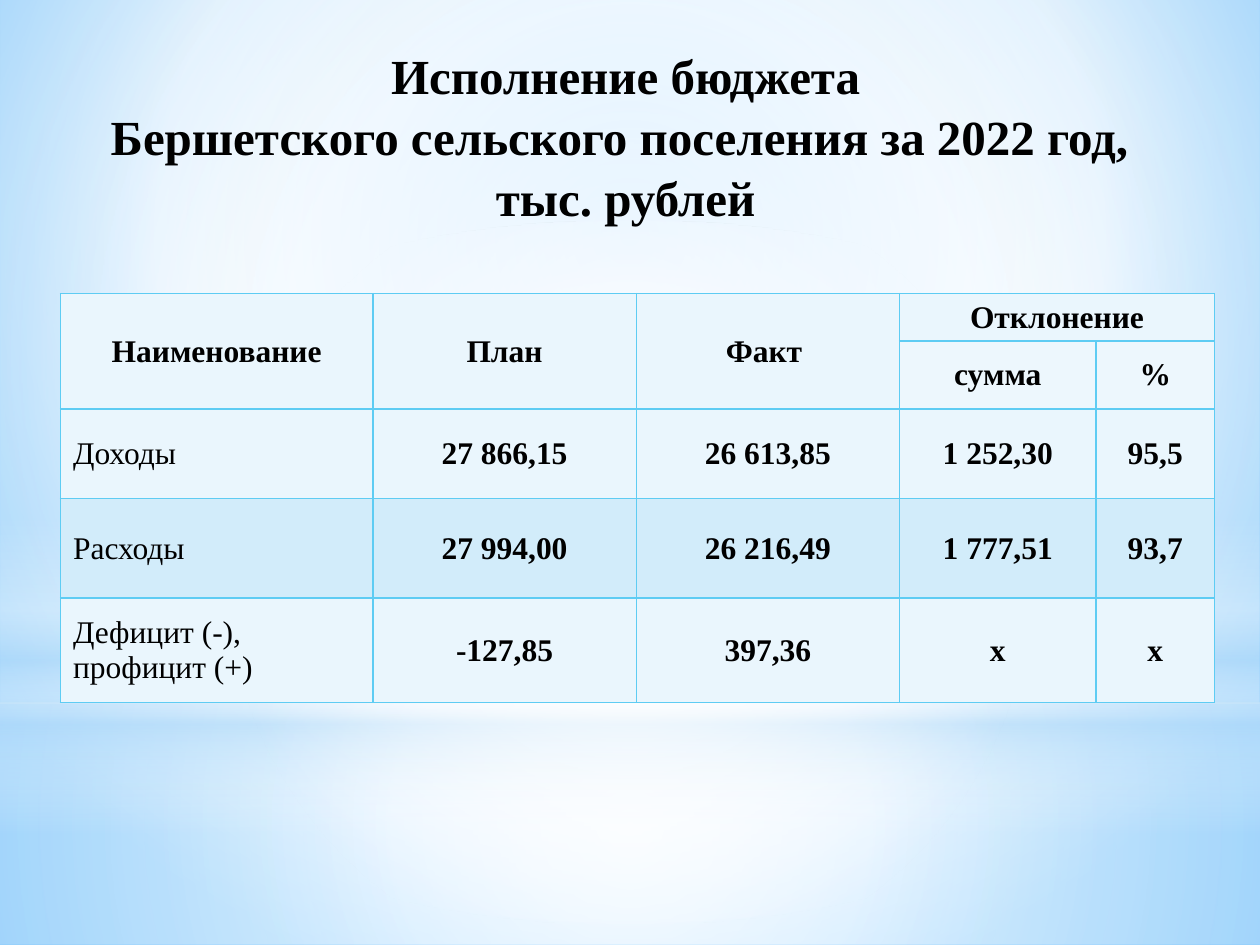
import pptx
import pptx.dml.color
import pptx.enum.shapes
import pptx.enum.text
import pptx.oxml
import pptx.oxml.ns
import pptx.util

Inches, Pt = pptx.util.Inches, pptx.util.Pt
RGBColor = pptx.dml.color.RGBColor
PP_ALIGN = pptx.enum.text.PP_ALIGN
MIDDLE = pptx.enum.text.MSO_ANCHOR.MIDDLE
MSO_SHAPE = pptx.enum.shapes.MSO_SHAPE
qn = pptx.oxml.ns.qn
NS = pptx.oxml.ns.nsdecls("a")

BLACK = RGBColor(0x00, 0x00, 0x00)
WHITE = RGBColor(0xFF, 0xFF, 0xFF)
SKY = RGBColor(0xB4, 0xDC, 0xFA)
BG_EDGE = RGBColor(0x5B, 0xB9, 0xFF)
BG_CORE = RGBColor(0x9E, 0xD5, 0xFF)
BORDER = RGBColor(0x5E, 0xCC, 0xF3)
ROW_LIGHT = RGBColor(0xEA, 0xF6, 0xFD)
ROW_SUBHEAD = RGBColor(0xED, 0xF7, 0xFD)
ROW_DARK = RGBColor(0xD2, 0xEC, 0xFA)

CENTRE = (50, 50, 50, 50)


class Deck:
    font = "Times New Roman"

    def __init__(self, prs):
        self.s = prs.slides.add_slide(prs.slide_layouts[5])

    def gradient(self, parent, stops, focus=None):
        """Swap the default gradient of parent: circular around focus, or vertical."""
        gs = "".join(
            f'<a:gs pos="{pos * 1000}"><a:srgbClr val="{color}">'
            f'<a:alpha val="{alpha * 1000}"/></a:srgbClr></a:gs>'
            for pos, color, alpha in stops)
        if focus:
            l, t, r, b = (v * 1000 for v in focus)
            course = (f'<a:path path="circle"><a:fillToRect l="{l}" t="{t}" '
                      f'r="{r}" b="{b}"/></a:path>')
        else:
            course = '<a:lin ang="5400000" scaled="0"/>'
        old = parent.find(".//" + qn("a:gradFill"))
        old.getparent().replace(old, pptx.oxml.parse_xml(
            f'<a:gradFill {NS} rotWithShape="1"><a:gsLst>{gs}</a:gsLst>{course}</a:gradFill>'))

    def background(self, stops, focus):
        self.s.background.fill.gradient()
        self.gradient(self.s._element, stops, focus)

    def glow(self, kind, top, height, stops, focus=None):
        sp = self.s.shapes.add_shape(kind, 0, Inches(top), Inches(10), Inches(height))
        sp.shadow.inherit = False
        sp.line.fill.background()
        sp.fill.gradient()
        self.gradient(sp._element.spPr, stops, focus)

    def run(self, p, text, size, bold=True):
        r = p.add_run()
        r.text = text
        r.font.name, r.font.size, r.font.bold = self.font, Pt(size), bold
        r.font.color.rgb = BLACK

    def title(self, paragraphs, box, size):
        sp = self.s.shapes.title
        sp.left, sp.top, sp.width, sp.height = map(Inches, box)
        self.s.shapes._spTree.append(sp._element)  # bring to front
        tf = sp.text_frame
        tf.word_wrap = True
        tf.vertical_anchor = MIDDLE
        for i, lines in enumerate(paragraphs):
            p = tf.add_paragraph() if i else tf.paragraphs[0]
            p.alignment = PP_ALIGN.CENTER
            p.line_spacing = 1.04
            for j, line in enumerate(lines):
                if j:
                    p.add_line_break()
                self.run(p, line, size)

    def border(self, cell):
        tcPr = cell._tc.get_or_add_tcPr()
        for i, side in enumerate(("lnL", "lnR", "lnT", "lnB")):
            tcPr.insert(i, pptx.oxml.parse_xml(
                f'<a:{side} {NS} w="12700"><a:solidFill><a:srgbClr val="{BORDER}"/>'
                f'</a:solidFill></a:{side}>'))

    def table(self, rows, fills, left, top, widths, heights, merges, size, head_rows):
        tbl = self.s.shapes.add_table(
            len(rows), len(widths), Inches(left), Inches(top),
            Inches(sum(widths)), Inches(sum(heights))).table
        for col, width in zip(tbl.columns, widths):
            col.width = Inches(width)
        for row, height in zip(tbl.rows, heights):
            row.height = Inches(height)
        for (r1, c1), (r2, c2) in merges:
            tbl.cell(r1, c1).merge(tbl.cell(r2, c2))
        for i, (row, color) in enumerate(zip(rows, fills)):
            for j, text in enumerate(row):
                cell = tbl.cell(i, j)
                cell.fill.solid()
                cell.fill.fore_color.rgb = color
                cell.vertical_anchor = MIDDLE
                self.border(cell)
                if text:
                    label = j == 0 and i >= head_rows
                    p = cell.text_frame.paragraphs[0]
                    p.alignment = PP_ALIGN.LEFT if label else PP_ALIGN.CENTER
                    self.run(p, text, size, bold=not label)


def main():
    prs = pptx.Presentation()
    prs.slide_width, prs.slide_height = Inches(10), Inches(7.5)
    deck = Deck(prs)

    # Sky background and its layers of light
    deck.background([(0, BG_CORE, 100), (60, WHITE, 100), (100, BG_EDGE, 100)],
                    (20, 10, 20, 60))
    deck.glow(MSO_SHAPE.RECTANGLE, 5.58, 1.92,
              [(0, WHITE, 91), (37, WHITE, 76), (100, SKY, 79)], CENTRE)
    deck.glow(MSO_SHAPE.RECTANGLE, 0, 5.58,
              [(0, WHITE, 89), (48, WHITE, 62), (100, SKY, 79)], CENTRE)
    deck.glow(MSO_SHAPE.RECTANGLE, 4.12, 2.5,
              [(0, WHITE, 0), (29, WHITE, 30), (45, SKY, 40),
               (55, WHITE, 26), (65, SKY, 60), (100, WHITE, 0)])
    deck.glow(MSO_SHAPE.OVAL, 1.75, 5.58, [(0, WHITE, 100), (56, WHITE, 0)], CENTRE)

    # Budget table
    rows = [
        ["Наименование", "План", "Факт ", "Отклонение", ""],
        ["", "", "", "сумма", "%"],
        ["Доходы", "27 866,15", "26 613,85", "1 252,30", "95,5"],
        ["Расходы", "27 994,00", "26 216,49", "1 777,51", "93,7"],
        ["Дефицит (-), профицит (+)", "-127,85", "397,36", "х", "х"],
    ]
    fills = [ROW_LIGHT, ROW_SUBHEAD, ROW_LIGHT, ROW_DARK, ROW_LIGHT]
    merges = [((0, c), (1, c)) for c in range(3)] + [((0, 3), (0, 4))]
    deck.table(rows, fills, 0.48, 2.33, [2.48, 2.09, 2.09, 1.56, 0.94],
               [0.37, 0.54, 0.71, 0.79, 0.83], merges, size=18, head_rows=2)

    # Title
    deck.title([[" Исполнение бюджета ", "Бершетского сельского поселения за 2022 год, "],
                ["тыс. рублей"]], (0.12, 0.33, 9.69, 1.48), size=28)

    prs.save("out.pptx")


if __name__ == "__main__":
    main()
